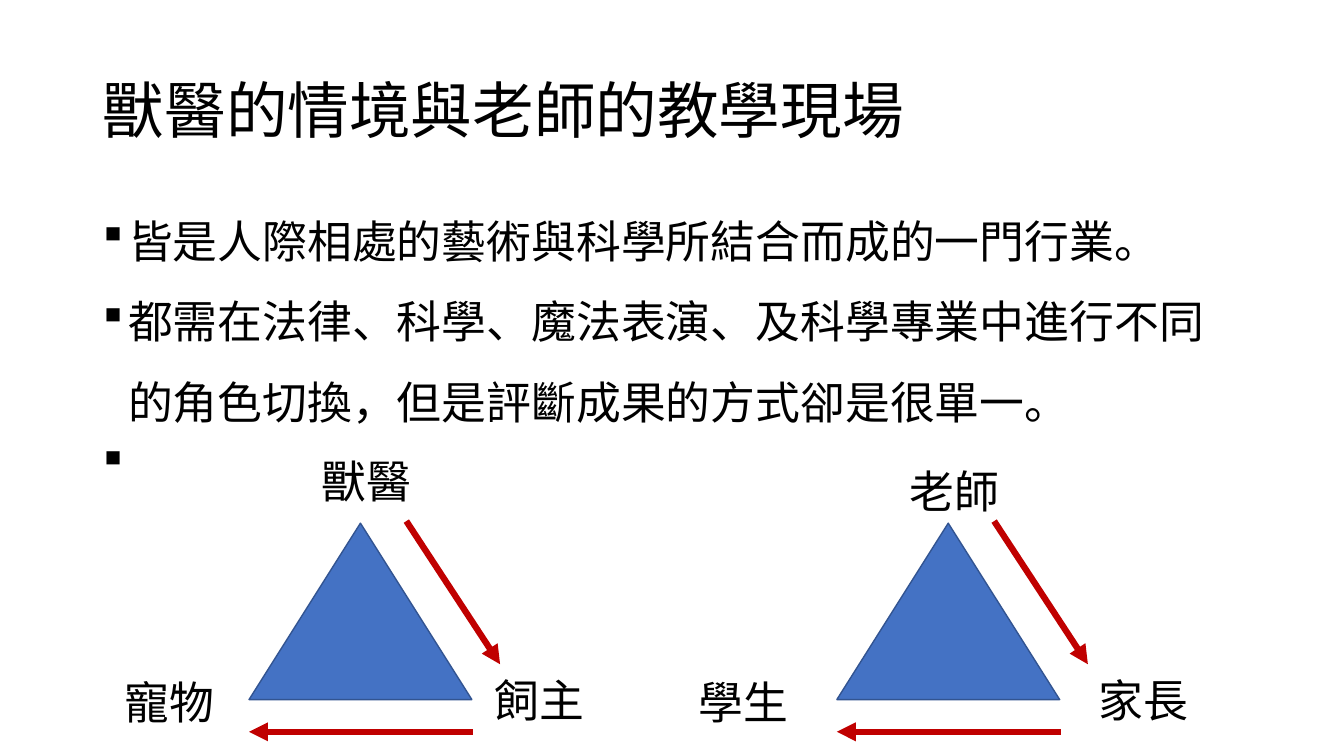
import pptx
import pptx.dml.color
import pptx.enum.shapes
import pptx.enum.text
import pptx.oxml
import pptx.oxml.ns
import pptx.util

PX = 9144  # 100 px to the inch
FONT = "Noto Sans CJK SC"
BLACK = pptx.dml.color.RGBColor(0x00, 0x00, 0x00)
BLUE = pptx.dml.color.RGBColor(0x44, 0x72, 0xC4)
DARK_BLUE = pptx.dml.color.RGBColor(0x32, 0x54, 0x91)
RED = pptx.dml.color.RGBColor(0xC0, 0x00, 0x00)

TITLE = "獸醫的情境與老師的教學現場"
# text, line spacing, space before in points
POINTS = [
    ("皆是人際相處的藝術與科學所結合而成的一門行業。", 1.5, 10),
    ("都需在法律、科學、魔法表演、及科學專業中進行不同的角色切換，"
     "但是評斷成果的方式卻是很單一。", 1.5, 0),
    (" ", 0.9, 10),
]
# left edge of the triangle, then the labels with their left and top
RELATIONS = [
    (247, [("獸醫", 309, 445), ("飼主", 481, 662), ("寵物", 114, 664)]),
    (830, [("老師", 892, 455), ("家長", 1080, 662), ("學生", 683, 664)]),
]


def px(*lengths):
    return [pptx.util.Emu(length * PX) for length in lengths]


def add_xml(parent, tag, **attributes):
    element = pptx.oxml.ns.qn(tag)
    child = parent.makeelement(element, attributes)
    parent.append(child)
    return child


def style_paragraph(paragraph, size):
    """Set size, colour and both the Latin and the East Asian font."""
    font = paragraph.font
    font.size = pptx.util.Pt(size)
    font.color.rgb = BLACK
    font.name = FONT
    defaults = paragraph._p.pPr.find(pptx.oxml.ns.qn("a:defRPr"))
    add_xml(defaults, "a:ea", typeface=FONT)


def place(placeholder, left, top, width, height):
    placeholder.left, placeholder.top, placeholder.width, placeholder.height = px(
        left, top, width, height)
    placeholder.text_frame.auto_size = pptx.enum.text.MSO_AUTO_SIZE.NONE


def fill_title(title):
    place(title, 92, 40, 1150, 145)
    title.text_frame.vertical_anchor = pptx.enum.text.MSO_ANCHOR.MIDDLE
    heading = title.text_frame.paragraphs[0]
    heading.text = TITLE
    heading.alignment = pptx.enum.text.PP_ALIGN.LEFT
    heading.line_spacing = 0.9
    style_paragraph(heading, 44)


def add_square_bullet(paragraph):
    properties = paragraph._p.get_or_add_pPr()
    indent = 25 * PX
    properties.set("marL", str(indent))
    properties.set("indent", str(-indent))
    add_xml(properties, "a:buFont", typeface="Wingdings", charset="2")
    add_xml(properties, "a:buChar", char="§")


def fill_points(body):
    place(body, 92, 180, 1150, 476)
    frame = body.text_frame
    for index, (text, spacing, before) in enumerate(POINTS):
        point = frame.add_paragraph() if index else frame.paragraphs[0]
        point.text = text
        point.line_spacing = spacing
        point.space_before = pptx.util.Pt(before)
        add_square_bullet(point)
        style_paragraph(point, 32)


def add_triangle(shapes, left, top, width, height):
    triangle = shapes.add_shape(
        pptx.enum.shapes.MSO_SHAPE.ISOSCELES_TRIANGLE, *px(left, top, width, height))
    triangle.shadow.inherit = False
    triangle.fill.solid()
    triangle.fill.fore_color.rgb = BLUE
    triangle.line.color.rgb = DARK_BLUE
    triangle.line.width = pptx.util.Pt(1)


def add_label(shapes, text, left, top):
    frame = shapes.add_textbox(*px(left, top, 133, 64)).text_frame
    frame.word_wrap = True
    frame.auto_size = pptx.enum.text.MSO_AUTO_SIZE.SHAPE_TO_FIT_TEXT
    label = frame.paragraphs[0]
    label.text = text
    style_paragraph(label, 32)


def add_arrow(shapes, *ends):
    arrow = shapes.add_connector(
        pptx.enum.shapes.MSO_CONNECTOR.STRAIGHT, *px(*ends))
    arrow.line.color.rgb = RED
    arrow.line.width = pptx.util.Pt(4.5)
    add_xml(arrow.line._get_or_add_ln(), "a:tailEnd", type="triangle")
    add_xml(arrow._element.spPr, "a:effectLst")


def add_relation(slide, left, labels):
    """Group a triangle, the roles at its corners and two arrows."""
    shapes = slide.shapes.add_group_shape().shapes
    add_triangle(shapes, left, 519, 221, 175)
    for text, label_left, label_top in labels:
        add_label(shapes, text, label_left, label_top)
    add_arrow(shapes, left + 156, 517, left + 249, 659)
    add_arrow(shapes, left + 222, 726, left, 726)


def main():
    presentation = pptx.Presentation()
    presentation.slide_width, presentation.slide_height = px(1333, 750)
    slide = presentation.slides.add_slide(presentation.slide_layouts[1])
    fill_title(slide.shapes.title)
    fill_points(slide.placeholders[1])
    for left, labels in RELATIONS:
        add_relation(slide, left, labels)
    presentation.save("out.pptx")


if __name__ == "__main__":
    main()
